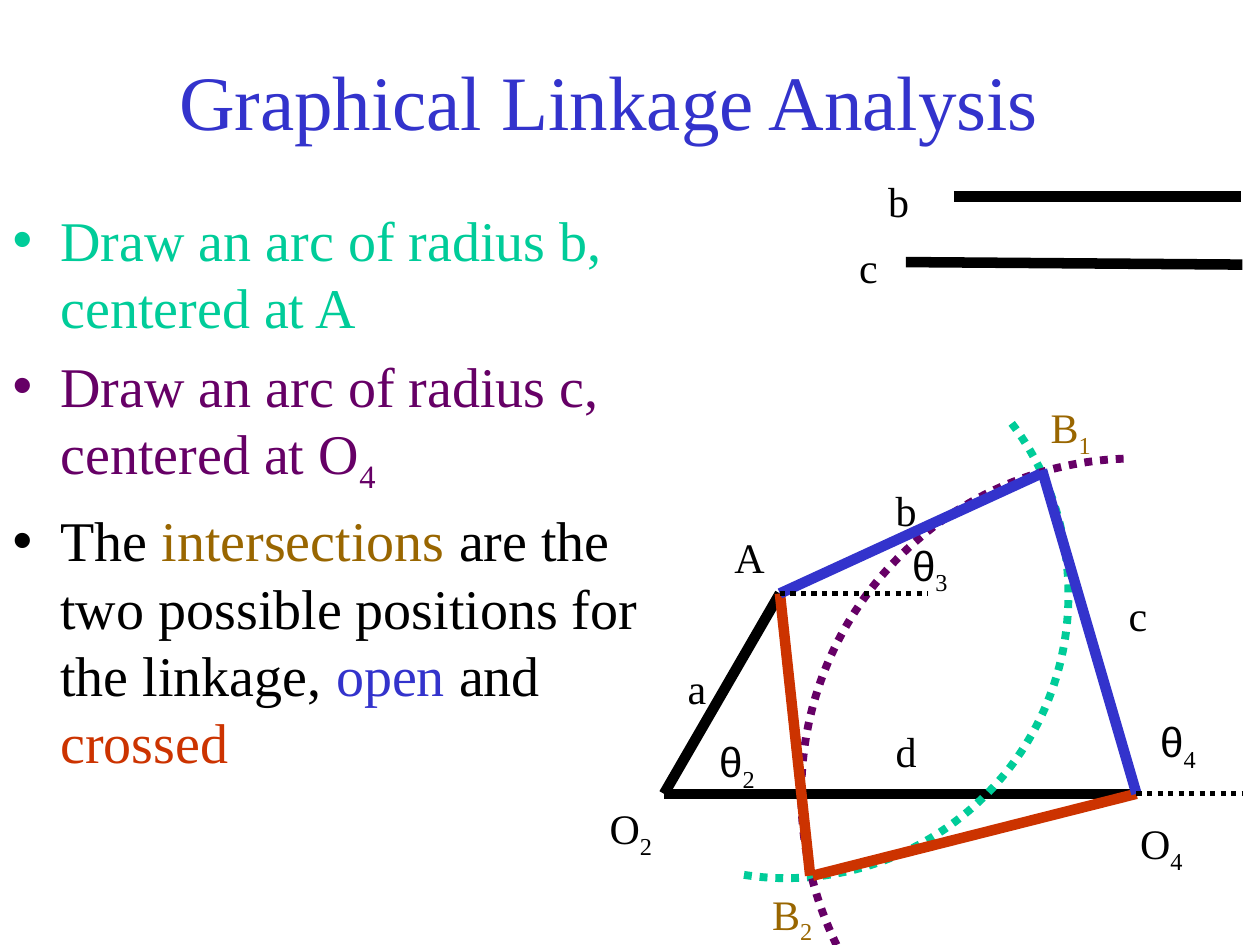
from lxml.etree import SubElement
from pptx import Presentation
from pptx.dml.color import RGBColor
from pptx.enum.dml import MSO_LINE
from pptx.enum.shapes import MSO_CONNECTOR
from pptx.enum.text import MSO_ANCHOR, MSO_AUTO_SIZE, PP_ALIGN
from pptx.oxml.ns import qn
from pptx.util import Inches, Pt

COLORS = {
    "black": "000000",
    "blue": "3333CC",
    "green": "00CC99",
    "purple": "660066",
    "gold": "996600",
    "red": "CC3300",
}
SERIF = "Times New Roman"
SANS = "Arial"

O2 = (5.27, 6.3)
O4 = (9.02, 6.3)
A = (6.19, 4.71)


def add_run(paragraph, text, size=24, color="black", font=SERIF, subscript=False):
    run = paragraph.add_run()
    run.text = text
    run.font.size = Pt(size)
    run.font.name = font
    run.font.color.rgb = RGBColor.from_string(COLORS[color])
    if subscript:
        run.font._element.set("baseline", "-25000")


class LinkageSlide:
    def __init__(self, presentation):
        self.slide = presentation.slides.add_slide(presentation.slide_layouts[1])
        self.shapes = self.slide.shapes

    def start_group(self):
        self.shapes = self.slide.shapes.add_group_shape().shapes

    def end_group(self):
        self.shapes = self.slide.shapes

    def place(self, shape, left, top, width, height):
        shape.left, shape.top = Inches(left), Inches(top)
        shape.width, shape.height = Inches(width), Inches(height)

    def title(self, text, *box):
        shape = self.slide.shapes.title
        self.place(shape, *box)
        frame = shape.text_frame
        frame.auto_size = MSO_AUTO_SIZE.NONE
        frame.vertical_anchor = MSO_ANCHOR.MIDDLE
        paragraph = frame.paragraphs[0]
        paragraph.alignment = PP_ALIGN.CENTER
        add_run(paragraph, text, size=44, color="blue")

    def bullets(self, items, *box):
        shape = self.slide.placeholders[1]
        self.place(shape, *box)
        frame = shape.text_frame
        frame.auto_size = MSO_AUTO_SIZE.NONE
        frame.vertical_anchor = MSO_ANCHOR.TOP
        for index, runs in enumerate(items):
            paragraph = frame.add_paragraph() if index else frame.paragraphs[0]
            paragraph.space_before = Pt(6.4 if index else 0)
            properties = paragraph._p.get_or_add_pPr()
            properties.set("marL", str(Inches(0.38)))
            properties.set("indent", str(Inches(-0.38)))
            SubElement(properties, qn("a:buChar")).set("char", "•")
            for text, color, subscript in runs:
                add_run(paragraph, text, size=32, color=color, subscript=subscript)

    def label(self, text, left, top, width, subscript="", color="black", font=SERIF):
        shape = self.shapes.add_textbox(
            Inches(left), Inches(top), Inches(width), Inches(0.5))
        frame = shape.text_frame
        frame.word_wrap = False
        frame.auto_size = MSO_AUTO_SIZE.SHAPE_TO_FIT_TEXT
        paragraph = frame.paragraphs[0]
        add_run(paragraph, text, color=color, font=font)
        if subscript:
            add_run(paragraph, subscript, color=color, subscript=True)

    def stroke(self, shape, color, width, dotted):
        shape.line.color.rgb = RGBColor.from_string(COLORS[color])
        shape.line.width = Pt(width)
        if dotted:
            shape.line.dash_style = MSO_LINE.ROUND_DOT

    def line(self, start, end, color="black", width=6, dotted=False):
        connector = self.shapes.add_connector(
            MSO_CONNECTOR.STRAIGHT, *(Inches(value) for value in start + end))
        self.stroke(connector, color, width, dotted)
        SubElement(connector._element.spPr, qn("a:effectLst"))

    def arc(self, start, curve_points, color):
        builder = self.shapes.build_freeform(Inches(start[0]), Inches(start[1]))
        builder.add_line_segments(
            [(Inches(x), Inches(y)) for x, y in curve_points], close=False)
        shape = builder.convert_to_shape()
        segments = list(shape._element.iter(qn("a:lnTo")))
        for index in range(0, len(segments), 3):
            curve, *others = segments[index:index + 3]
            curve.tag = qn("a:cubicBezTo")
            for other in others:
                curve.append(other[0])
                other.getparent().remove(other)
        shape.shadow.inherit = False
        shape.fill.background()
        self.stroke(shape, color, 4.5, True)


def main():
    presentation = Presentation()
    presentation.slide_width, presentation.slide_height = Inches(10), Inches(7.5)
    board = LinkageSlide(presentation)

    board.title("Graphical Linkage Analysis", 0, 0.17, 9.67, 1.25)
    board.bullets([
        [("Draw an arc of radius b, centered at A", "green", False)],
        [("Draw an arc of radius c, centered at O", "purple", False),
         ("4", "purple", True)],
        [("The ", "black", False),
         ("intersections", "gold", False),
         (" are the two possible positions for the linkage, ", "black", False),
         ("open", "blue", False),
         (" and ", "black", False),
         ("crossed", "red", False)],
    ], 0, 1.58, 5.38, 5.67)

    board.line(O2, O4)
    board.line(O2, A)
    board.arc((8.03, 3.36), [
        (8.33, 3.75), (8.48, 4.23), (8.48, 4.72),
        (8.48, 5.96), (7.48, 6.97), (6.23, 6.97),
        (6.12, 6.97), (6, 6.96), (5.88, 6.94)], "green")
    board.arc((6.64, 7.5), [
        (6.46, 7.13), (6.36, 6.72), (6.36, 6.3),
        (6.36, 4.87), (7.49, 3.69), (8.93, 3.64)], "purple")

    board.start_group()
    board.line(A, (6.43, 6.95), "red")
    board.line(O4, (6.45, 6.95), "red")
    board.end_group()

    board.label("a", 5.36, 5.21, 0.35)
    board.label("d", 7.01, 5.71, 0.37)
    board.label("θ", 5.61, 5.79, 0.49, subscript="2", font=SANS)

    board.start_group()
    board.line(A, (8.26, 3.76), "blue")
    board.line(O4, (8.27, 3.73), "blue")
    board.label("b", 7.01, 3.8, 0.37)
    board.label("c", 8.86, 4.63, 0.35)
    board.label("θ", 7.14, 4.23, 0.49, subscript="3", font=SANS)
    board.label("θ", 9.11, 5.63, 0.49, subscript="4", font=SANS)
    board.line(O4, (9.86, 6.3), width=3, dotted=True)
    board.line(A, (7.36, 4.71), width=3, dotted=True)

    board.start_group()
    board.line((7.57, 1.56), (9.85, 1.56))
    board.line((9.86, 2.1), (7.19, 2.08))
    board.label("b", 6.95, 1.34, 0.37)
    board.label("c", 6.72, 1.87, 0.35)
    board.end_group()

    board.label("A", 5.73, 4.17, 0.44)
    board.label("O", 4.74, 6.32, 0.55, subscript="2")
    board.label("O", 8.95, 6.44, 0.55, subscript="4")

    board.start_group()
    board.label("B", 8.24, 3.14, 0.53, subscript="1", color="gold")
    board.label("B", 6.03, 7, 0.53, subscript="2", color="gold")

    presentation.save("out.pptx")


if __name__ == "__main__":
    main()
